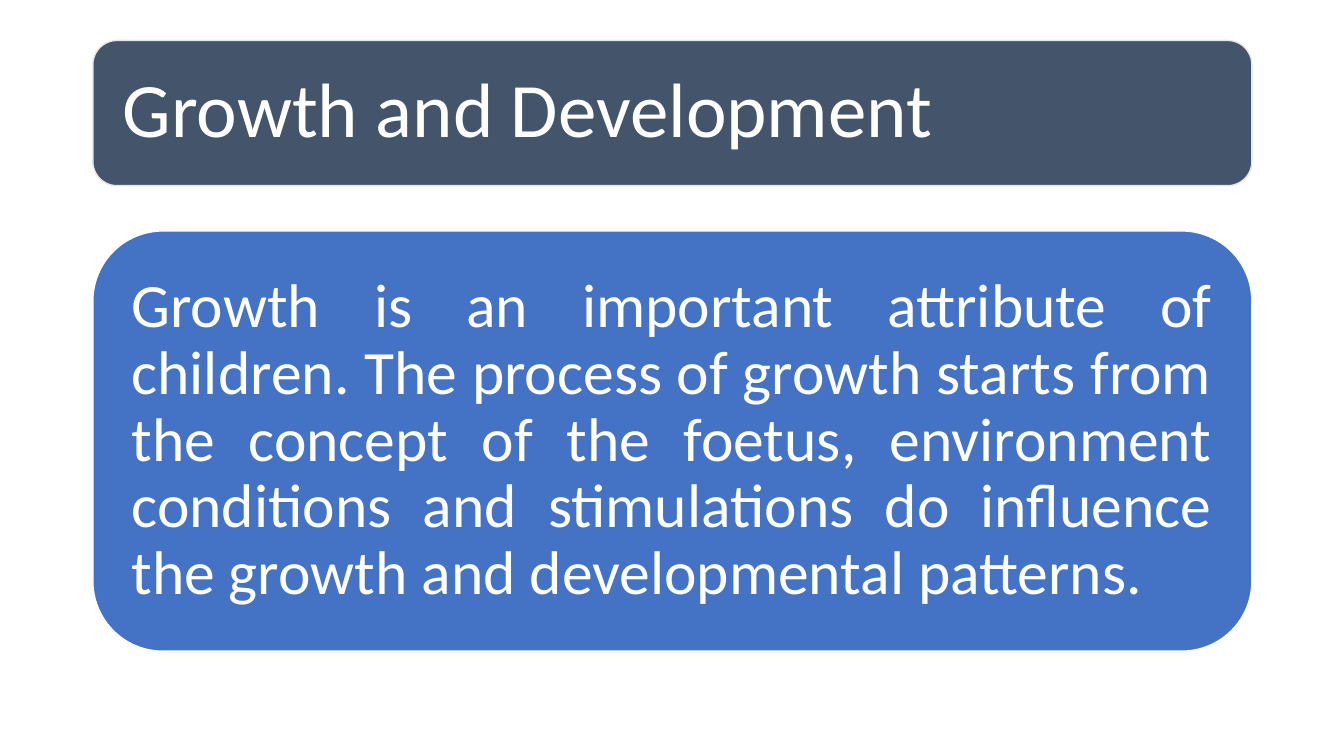
from pptx import Presentation
from pptx.dml.color import RGBColor
from pptx.enum.shapes import MSO_SHAPE
from pptx.enum.text import MSO_ANCHOR, PP_ALIGN
from pptx.util import Cm, Pt

WHITE = RGBColor(0xFF, 0xFF, 0xFF)
SLATE = RGBColor(0x44, 0x54, 0x6A)
BLUE = RGBColor(0x44, 0x72, 0xC4)
PALE = RGBColor(0xE7, 0xE6, 0xE6)

TITLE = "Growth and Development"
BODY = (
    "Growth is an important attribute of children. The process of growth "
    "starts from the concept of the foetus, environment conditions and "
    "stimulations do influence the growth and developmental patterns."
)


class Deck:
    font = "Calibri"
    left, width = Cm(2.34), Cm(29.21)

    def __init__(self):
        self.prs = Presentation()
        self.prs.slide_width = Cm(33.87)
        self.prs.slide_height = Cm(19.05)
        self.slide = self.prs.slides.add_slide(self.prs.slide_layouts[6])

    def panel(self, text, top, height, fill, edge, size, inset, align):
        """Add a full-width rounded box that holds one paragraph."""
        box = self.slide.shapes.add_shape(
            MSO_SHAPE.ROUNDED_RECTANGLE, self.left, Cm(top), self.width, Cm(height))
        box.shadow.inherit = False
        box.fill.solid()
        box.fill.fore_color.rgb = fill
        box.line.color.rgb = edge
        box.line.width = Pt(1)

        frame = box.text_frame
        frame.word_wrap = True
        frame.vertical_anchor = MSO_ANCHOR.MIDDLE
        frame.margin_left = frame.margin_right = Cm(inset)
        frame.margin_top = frame.margin_bottom = Cm(inset)
        frame.text = text
        para = frame.paragraphs[0]
        para.alignment = align
        para.line_spacing = 0.9
        font = para.runs[0].font
        font.name = self.font
        font.size = Pt(size)
        font.color.rgb = WHITE

    def save(self):
        self.prs.save("out.pptx")


def main():
    deck = Deck()
    deck.panel(TITLE, 1.02, 3.66, SLATE, PALE, 55, 0.58, PP_ALIGN.LEFT)
    deck.panel(BODY, 5.82, 10.59, BLUE, WHITE, 44, 0.46, PP_ALIGN.JUSTIFY)
    deck.save()


if __name__ == "__main__":
    main()
